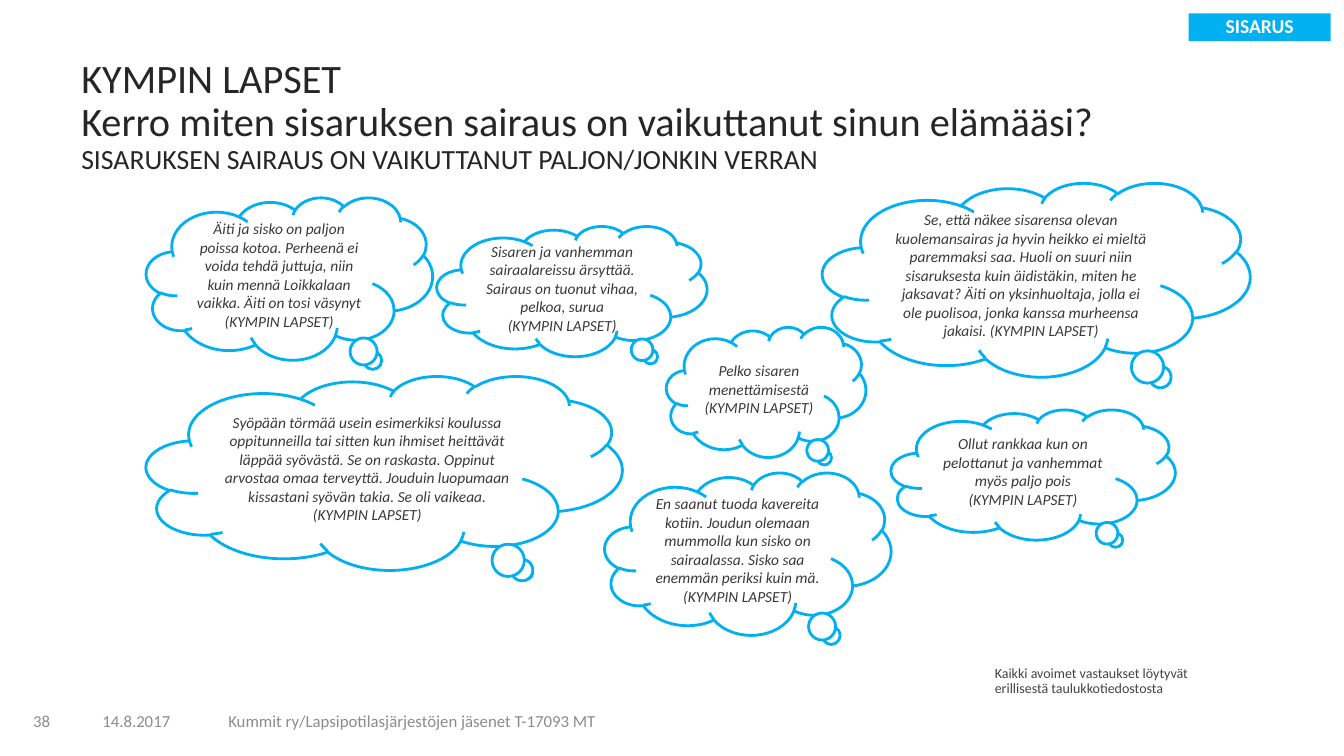
from pptx import Presentation
from pptx.dml.color import RGBColor
from pptx.enum import shapes, text
from pptx.util import Pt

COLORS = {
    "accent": "00B0F0",
    "white": "FFFFFF",
    "title": "262626",
    "quote": "3B3838",
    "note": "444444",
    "footer": "8C8C8C",
}
SOURCE = "(KYMPIN LAPSET)"


def color(name):
    return RGBColor.from_string(COLORS[name])


def write(shape, lines, size, ink, bold=None, italic=None, align="LEFT",
          anchor="MIDDLE", spacing=None):
    """Fill a shape with one paragraph for each line."""
    frame = shape.text_frame
    frame.word_wrap = True
    frame.vertical_anchor = text.MSO_ANCHOR[anchor]
    for index, line in enumerate(lines):
        paragraph = frame.add_paragraph() if index else frame.paragraphs[0]
        paragraph.alignment = text.PP_ALIGN[align]
        paragraph.line_spacing = spacing
        run = paragraph.add_run()
        run.text = line
        font = run.font
        font.name, font.size, font.bold, font.italic = "Calibri", Pt(size), bold, italic
        font.color.rgb = color(ink)
    return frame.paragraphs[0]


presentation = Presentation()
presentation.slide_width, presentation.slide_height = Pt(960), Pt(540)
slide = presentation.slides.add_slide(presentation.slide_layouts[6])

# Footer
for left, width, words in [
    (66, 73, "14.8.2017"),
    (156, 328, "Kummit ry/Lapsipotilasjärjestöjen jäsenet T-17093 MT"),
    (16.5, 32, "38"),
]:
    box = slide.shapes.add_textbox(Pt(left), Pt(500.5), Pt(width), Pt(28.5))
    write(box, [words], 12, "footer")

# Title with a smaller third line
box = slide.shapes.add_textbox(Pt(51), Pt(38), Pt(869), Pt(49))
heading = write(box, ["KYMPIN LAPSET"], 28.8, "title", anchor="TOP", spacing=0.9)
for words, size in [
    ("Kerro miten sisaruksen sairaus on vaikuttanut sinun elämääsi?", 28.8),
    ("SISARUKSEN SAIRAUS ON VAIKUTTANUT PALJON/JONKIN VERRAN", 19.8),
]:
    heading.add_line_break()
    run = heading.add_run()
    run.text = words
    run.font.name, run.font.size = "Calibri", Pt(size)
    run.font.color.rgb = color("title")

# Respondent tag
tag = slide.shapes.add_shape(shapes.MSO_SHAPE.RECTANGLE, Pt(849), Pt(9.5), Pt(101.5), Pt(20))
tag.shadow.inherit = False
tag.fill.solid()
tag.fill.fore_color.rgb = color("accent")
tag.line.fill.background()
write(tag, ["SISARUS"], 14, "white", bold=True, align="CENTER", spacing=0.9)

# Thought clouds: left, top, width, height, paragraphs
clouds = [
    (104.5, 141, 204.5, 116, [
        "Äiti ja sisko on paljon poissa kotoa. Perheenä ei voida tehdä juttuja, niin "
        "kuin mennä Loikkalaan vaikka. Äiti on tosi väsynyt " + SOURCE]),
    (432, 337.5, 204.5, 116, [
        "En saanut tuoda kavereita kotiin. Joudun olemaan mummolla kun sisko on "
        "sairaalassa. Sisko saa enemmän periksi kuin mä.", SOURCE]),
    (476, 233.5, 142.5, 93, ["Pelko sisaren menettämisestä", SOURCE]),
    (587.5, 130.5, 305.5, 138.5, [
        "Se, että näkee sisarensa olevan kuolemansairas ja hyvin heikko ei mieltä "
        "paremmaksi saa. Huoli on suuri niin sisaruksesta kuin äidistäkin, miten he "
        "jaksavat? Äiti on yksinhuoltaja, jolla ei ole puolisoa, jonka kanssa "
        "murheensa jakaisi. " + SOURCE]),
    (312, 161.5, 193, 93, [
        "Sisaren ja vanhemman sairaalareissu ärsyttää. Sairaus on tuonut vihaa, "
        "pelkoa, surua", SOURCE]),
    (636.5, 292.5, 203, 93, [
        "Ollut rankkaa kun on pelottanut ja vanhemmat myös paljo pois", SOURCE]),
    (104.5, 268.5, 340, 138.5, [
        "Syöpään törmää usein esimerkiksi koulussa oppitunneilla tai sitten kun "
        "ihmiset heittävät läppää syövästä. Se on raskasta. Oppinut arvostaa omaa "
        "terveyttä. Jouduin luopumaan kissastani syövän takia. Se oli vaikeaa. " + SOURCE]),
]
for left, top, width, height, quote in clouds:
    cloud = slide.shapes.add_shape(
        shapes.MSO_SHAPE.CLOUD_CALLOUT, Pt(left), Pt(top), Pt(width), Pt(height))
    cloud.adjustments[0], cloud.adjustments[1] = 0.3, 0.52
    cloud.shadow.inherit = False
    cloud.fill.solid()
    cloud.fill.fore_color.rgb = color("white")
    cloud.line.color.rgb = color("accent")
    cloud.line.width = Pt(2)
    write(cloud, quote, 11, "quote", italic=True, align="CENTER")

# Note on the open answers
note = slide.shapes.add_textbox(Pt(703.5), Pt(472.5), Pt(162), Pt(29.5))
write(note, ["Kaikki avoimet vastaukset löytyvät erillisestä taulukkotiedostosta"],
      10, "note", anchor="TOP", spacing=0.9)

presentation.save("out.pptx")
